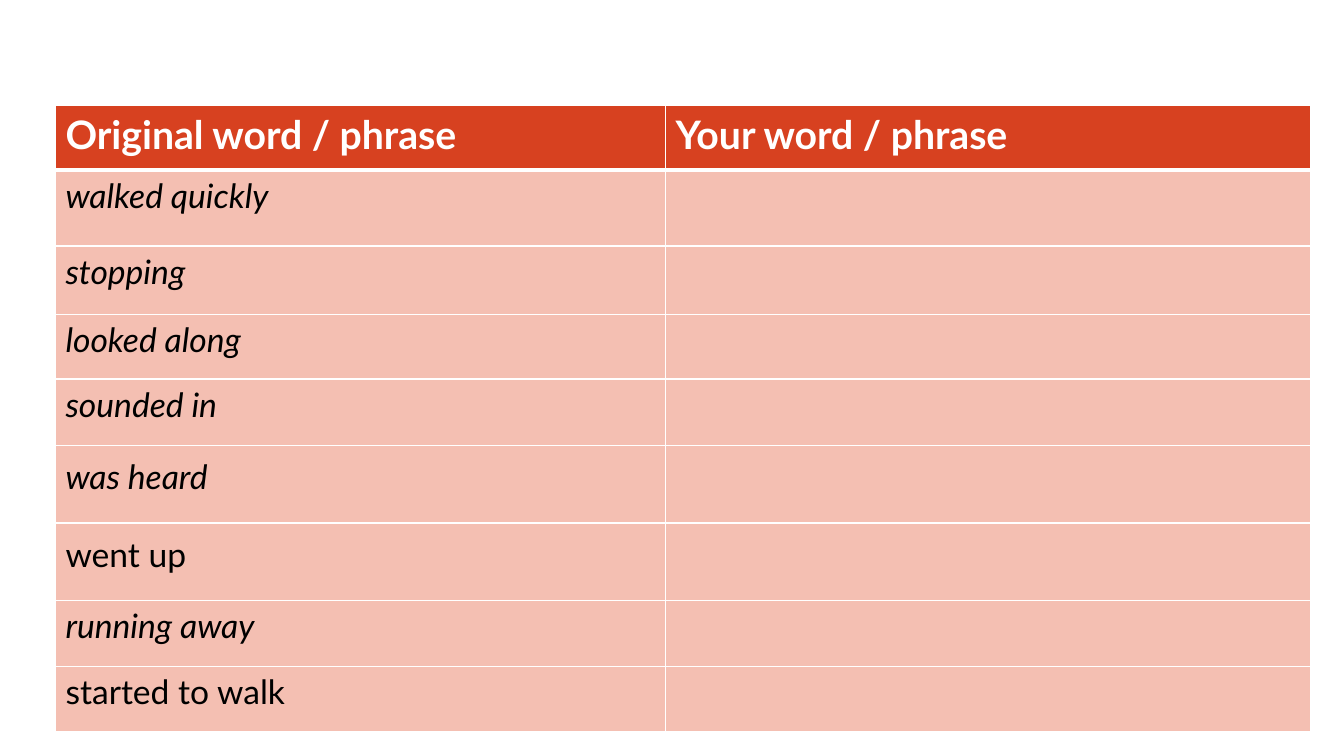
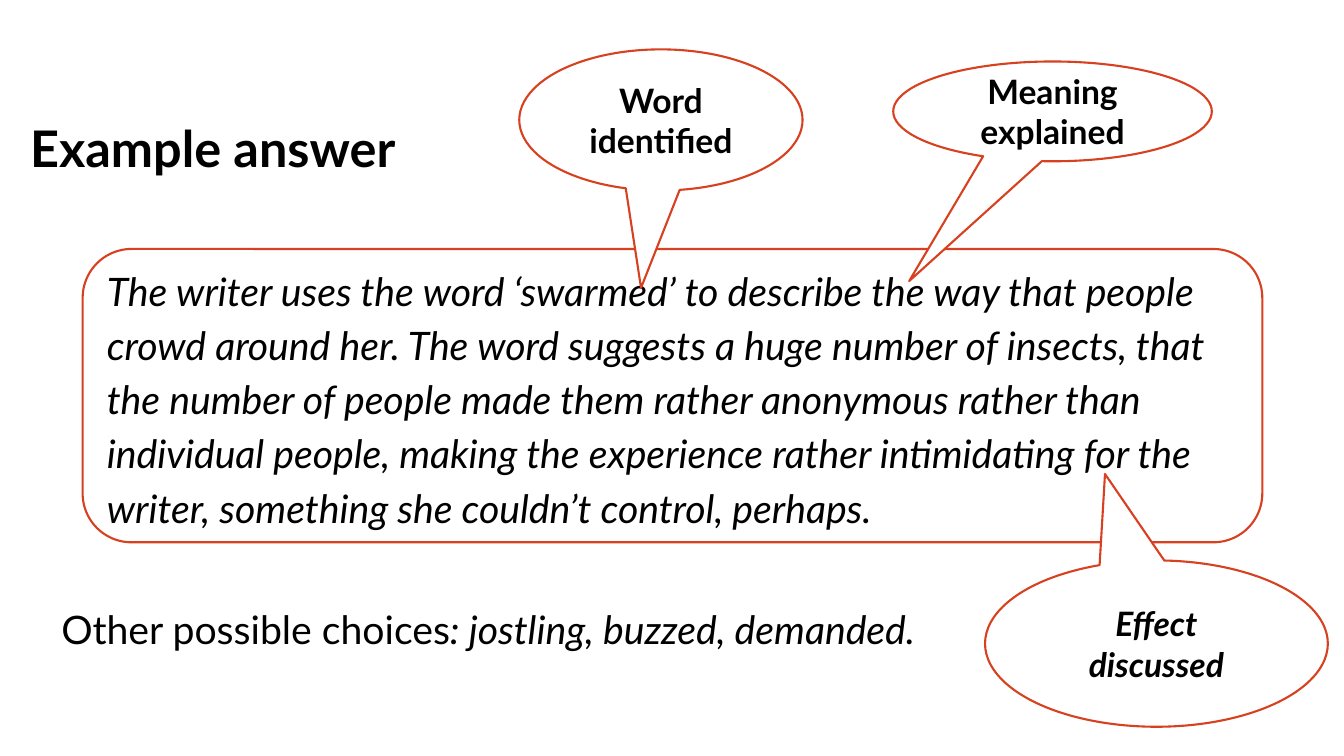
import pptx
import pptx.util
import pptx.dml.color
import pptx.enum.shapes
import pptx.enum.text
import pptx.oxml

SCALE = 9144  # EMU in one px, 100 px to the inch
FONT = "Lato"
RED, PINK, WHITE, BLACK = "D74120", "F4BFB2", "FFFFFF", "000000"
SHAPE = pptx.enum.shapes.MSO_SHAPE
ALIGN = pptx.enum.text.PP_ALIGN
MIDDLE = pptx.enum.text.MSO_ANCHOR.MIDDLE
PHRASES = [  # text, italic, spaced, row height
    ("walked quickly", True, False, 75),
    ("stopping", True, False, 68),
    ("looked along", True, False, 64),
    ("sounded in", True, False, 66),
    ("was heard", True, True, 77),
    ("went up", False, True, 77),
    ("running away", True, False, 65),
    ("started to walk", False, False, 65),
]
ANSWER = (
    "The writer uses the word ‘swarmed’ to describe the way that people "
    "crowd around her. The word suggests a huge number of insects, that "
    "the number of people made them rather anonymous rather than "
    "individual people, making the experience rather intimidating for the "
    "writer, something she couldn’t control, perhaps."
)


def px(num):
    return pptx.util.Emu(num * SCALE)


def color(code):
    return pptx.dml.color.RGBColor.from_string(code)


def paint(obj, code):
    obj.fill.solid()
    obj.fill.fore_color.rgb = color(code)


def add_run(para, text, size, bold=False, italic=False, ink=BLACK):
    run = para.add_run()
    run.text = text
    font = run.font
    font.name, font.size = FONT, pptx.util.Pt(size)
    font.bold, font.italic = bold, italic
    font.color.rgb = color(ink)


def space(para):
    """Set the loose line spacing used for longer text."""
    para.line_spacing = 1.15
    para.space_after = pptx.util.Pt(8)


def edge(cell, top, bottom):
    """Draw white cell borders; top and bottom are widths in points."""
    props = cell._tc.get_or_add_tcPr()
    sides = [("lnL", 1), ("lnR", 1), ("lnT", top), ("lnB", bottom)]
    for spot, (tag, width) in enumerate(sides):
        props.insert(spot, pptx.oxml.parse_xml(
            f'<a:{tag} xmlns:a="http://schemas.openxmlformats.org/drawingml/2006/main"'
            f' w="{pptx.util.Pt(width)}"><a:solidFill><a:srgbClr val="{WHITE}"/>'
            f'</a:solidFill></a:{tag}>'))


def text_box(slide, box):
    frame = slide.shapes.add_textbox(*map(px, box)).text_frame
    frame.word_wrap = True
    return frame


def outline(slide, kind, box):
    """Add a white shape with a red line."""
    shape = slide.shapes.add_shape(kind, *map(px, box))
    shape.shadow.inherit = False
    paint(shape, WHITE)
    shape.line.color.rgb = color(RED)
    shape.line.width = pptx.util.Pt(1.5)
    shape.text_frame.word_wrap = True
    shape.text_frame.vertical_anchor = MIDDLE
    return shape


def callout(slide, box, tip, text, italic=False):
    shape = outline(slide, SHAPE.OVAL_CALLOUT, box)
    shape.adjustments[0], shape.adjustments[1] = tip
    frame = shape.text_frame
    frame.margin_left = frame.margin_right = px(15)
    para = frame.paragraphs[0]
    para.alignment = ALIGN.CENTER
    add_run(para, text, 24, True, italic)


def word_table(slide, box, widths):
    rows = [64] + [row[-1] for row in PHRASES]
    table = slide.shapes.add_table(
        len(rows), len(widths), *map(px, box)).table
    for col, width in zip(table.columns, widths):
        col.width = px(width)
    for row, (line, height) in enumerate(zip(table.rows, rows)):
        line.height = px(height)
        for cell in line.cells:
            paint(cell, PINK if row else RED)
            edge(cell, 3 if row == 1 else 1, 1 if row else 3)
    for col, text in enumerate(["Original word / phrase", "Your word / phrase"]):
        para = table.cell(0, col).text_frame.paragraphs[0]
        add_run(para, text, 28, True, ink=WHITE)
    for row, (text, italic, loose, _) in enumerate(PHRASES, 1):
        para = table.cell(row, 0).text_frame.paragraphs[0]
        if loose:
            space(para)
        add_run(para, text, 24, italic=italic)


def title(slide, box, text):
    frame = text_box(slide, box)
    frame.vertical_anchor = MIDDLE
    para = frame.paragraphs[0]
    para.line_spacing = 0.9
    add_run(para, text, 36, True)


def answer(slide, box):
    shape = outline(slide, SHAPE.ROUNDED_RECTANGLE, box)
    para = shape.text_frame.paragraphs[0]
    para.alignment = ALIGN.LEFT
    space(para)
    add_run(para, ANSWER, 28, italic=True)


def choices(slide, box):
    para = text_box(slide, box).paragraphs[0]
    add_run(para, "Other possible choices", 28)
    add_run(para, ": jostling, buzzed, demanded.", 28, italic=True)


def main():
    deck = pptx.Presentation()
    deck.slide_width, deck.slide_height = px(1333), px(750)
    blank = deck.slide_layouts[6]

    slide = deck.slides.add_slide(blank)
    word_table(slide, (55, 105, 1245, 620), (605, 640))

    slide = deck.slides.add_slide(blank)
    title(slide, (20, 110, 1272, 79), "Example answer")
    answer(slide, (82, 247, 1170, 291))
    callout(slide, (515, 49, 281, 140), (-0.07, 1.19), "Word identified")
    callout(slide, (886, 61, 316, 99), (-0.45, 1.7), "Meaning explained")
    callout(slide, (977, 556, 340, 165), (-0.15, -1.02),
            "Effect discussed", italic=True)
    choices(slide, (51, 596, 953, 57))
    deck.save("out.pptx")


if __name__ == "__main__":
    main()
